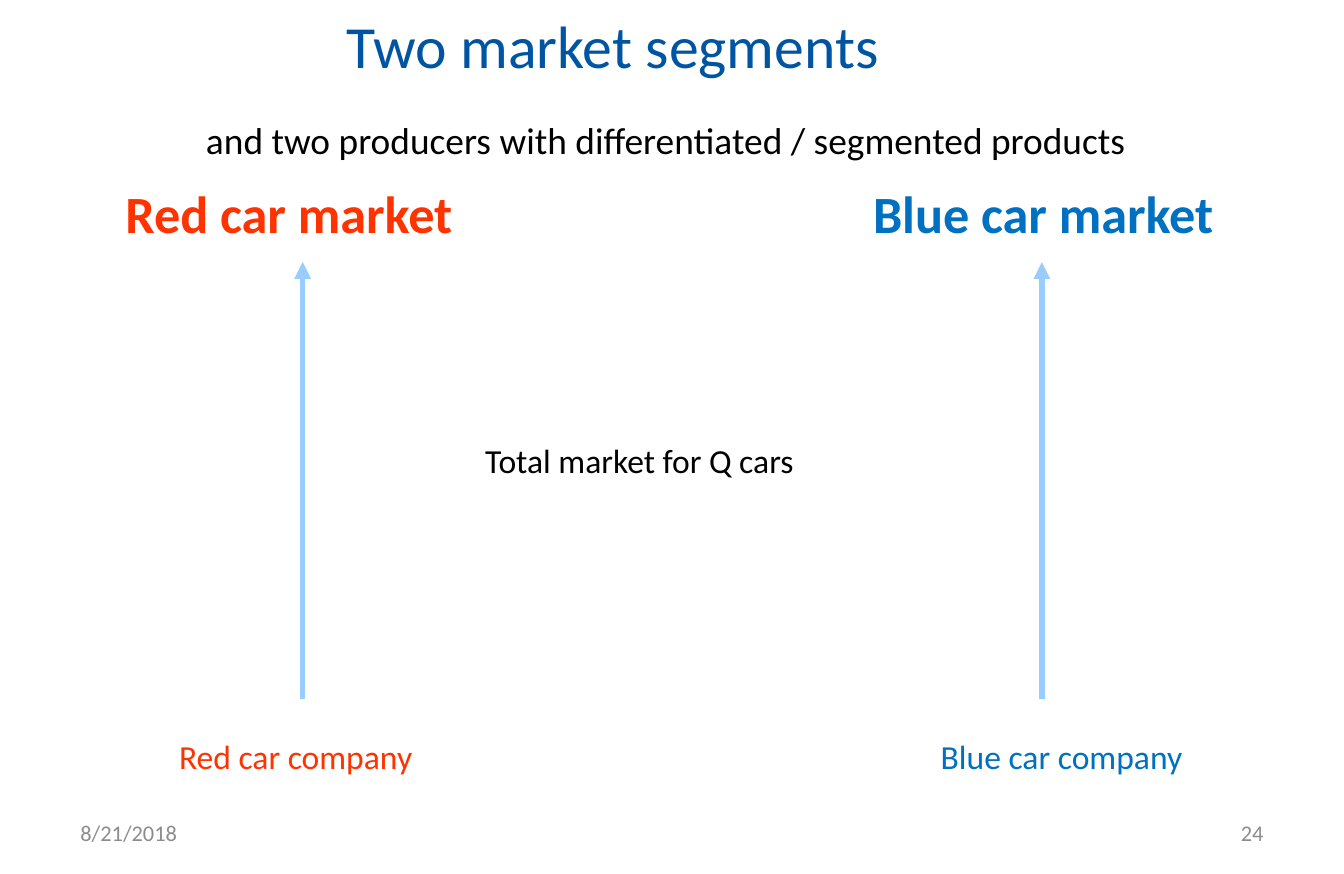
from dataclasses import dataclass

from lxml.etree import SubElement
from pptx import Presentation
from pptx.dml.color import RGBColor
from pptx.enum.shapes import MSO_CONNECTOR, MSO_SHAPE
from pptx.enum.text import MSO_ANCHOR, MSO_AUTO_SIZE, PP_ALIGN
from pptx.oxml.ns import qn
from pptx.slide import Slide
from pptx.util import Cm, Pt

FONT = "Calibri"
COLORS = {
    "title": "0055A2",
    "text": "000000",
    "footer": "8C8C8C",
    "red": "FF3300",
    "blue": "0070C0",
    "arrow": "99CCFF",
}


@dataclass
class Label:
    """A line of text; lengths in centimetres, size in points."""
    text: str
    left: float
    top: float
    width: float
    height: float
    size: int
    color: str
    align: PP_ALIGN = PP_ALIGN.LEFT
    anchor: MSO_ANCHOR = MSO_ANCHOR.TOP
    bold: bool = False
    wrap: bool = True
    grow: bool = False
    framed: bool = False


@dataclass
class Segment:
    """One market with its producer and the arrow between them."""
    name: str
    color: str
    market_left: float
    market_width: float
    company_left: float
    company_width: float
    arrow_x: float


def add_label(page: Slide, label: Label) -> None:
    place = [Cm(v) for v in (label.left, label.top, label.width, label.height)]
    if label.framed:
        box = page.shapes.add_shape(MSO_SHAPE.ROUNDED_RECTANGLE, *place)
        box.adjustments[0] = 0.003
        box.shadow.inherit = False
        box.fill.background()
        box.line.fill.background()
    else:
        box = page.shapes.add_textbox(*place)
    frame = box.text_frame
    frame.word_wrap = label.wrap
    frame.vertical_anchor = label.anchor
    frame.auto_size = (MSO_AUTO_SIZE.SHAPE_TO_FIT_TEXT if label.grow
                       else MSO_AUTO_SIZE.NONE)
    para = frame.paragraphs[0]
    para.alignment = label.align
    span = para.add_run()
    span.text = label.text
    span.font.name = FONT
    span.font.size = Pt(label.size)
    span.font.bold = label.bold
    span.font.color.rgb = RGBColor.from_string(COLORS[label.color])


def add_up_arrow(page: Slide, x: float, bottom: float, top: float) -> None:
    arrow = page.shapes.add_connector(
        MSO_CONNECTOR.STRAIGHT, Cm(x), Cm(bottom), Cm(x), Cm(top))
    arrow.line.width = Pt(3)
    arrow.line.color.rgb = RGBColor.from_string(COLORS["arrow"])
    SubElement(arrow.line._get_or_add_ln(), qn("a:tailEnd"), type="triangle")
    SubElement(arrow._element.spPr, qn("a:effectLst"))


def add_segment(page: Slide, segment: Segment) -> None:
    shared = dict(color=segment.color, align=PP_ALIGN.CENTER,
                  wrap=False, grow=True, framed=True)
    add_label(page, Label(f"{segment.name} car market", segment.market_left, 3.3,
                          segment.market_width, 1.45, 28, bold=True, **shared))
    add_label(page, Label(f"{segment.name} car company", segment.company_left, 13.77,
                          segment.company_width, 1.04, 18, **shared))
    add_up_arrow(page, segment.arrow_x, 13.21, 4.95)


LABELS = [
    # Title and subtitle
    Label("Two market segments", 6.3, 0, 19.1, 1.68, 32, "title",
          anchor=MSO_ANCHOR.MIDDLE),
    Label("and two producers with differentiated / segmented products ",
          1.68, 2.08, 21.97, 1.12, 20, "text", align=PP_ALIGN.CENTER, grow=True),
    # Centre caption
    Label("Total market for Q cars", 8.92, 8.18, 7.77, 1.02, 18, "text",
          wrap=False, grow=True),
    # Footer
    Label("8/21/2018", 1.27, 15.29, 5.92, 0.89, 12, "footer",
          anchor=MSO_ANCHOR.MIDDLE),
    Label("24", 18.21, 15.29, 5.92, 0.89, 12, "footer",
          align=PP_ALIGN.RIGHT, anchor=MSO_ANCHOR.MIDDLE),
]

SEGMENTS = [
    Segment("Red", "red", 2.08, 6.76, 3.1, 4.98, 5.72),
    Segment("Blue", "blue", 16.21, 7.01, 17.5, 5.13, 19.69),
]


def main() -> None:
    deck = Presentation()
    deck.slide_width, deck.slide_height = Cm(25.4), Cm(16.51)
    page = deck.slides.add_slide(deck.slide_layouts[6])
    for label in LABELS:
        add_label(page, label)
    for segment in SEGMENTS:
        add_segment(page, segment)
    deck.save("out.pptx")


if __name__ == "__main__":
    main()
